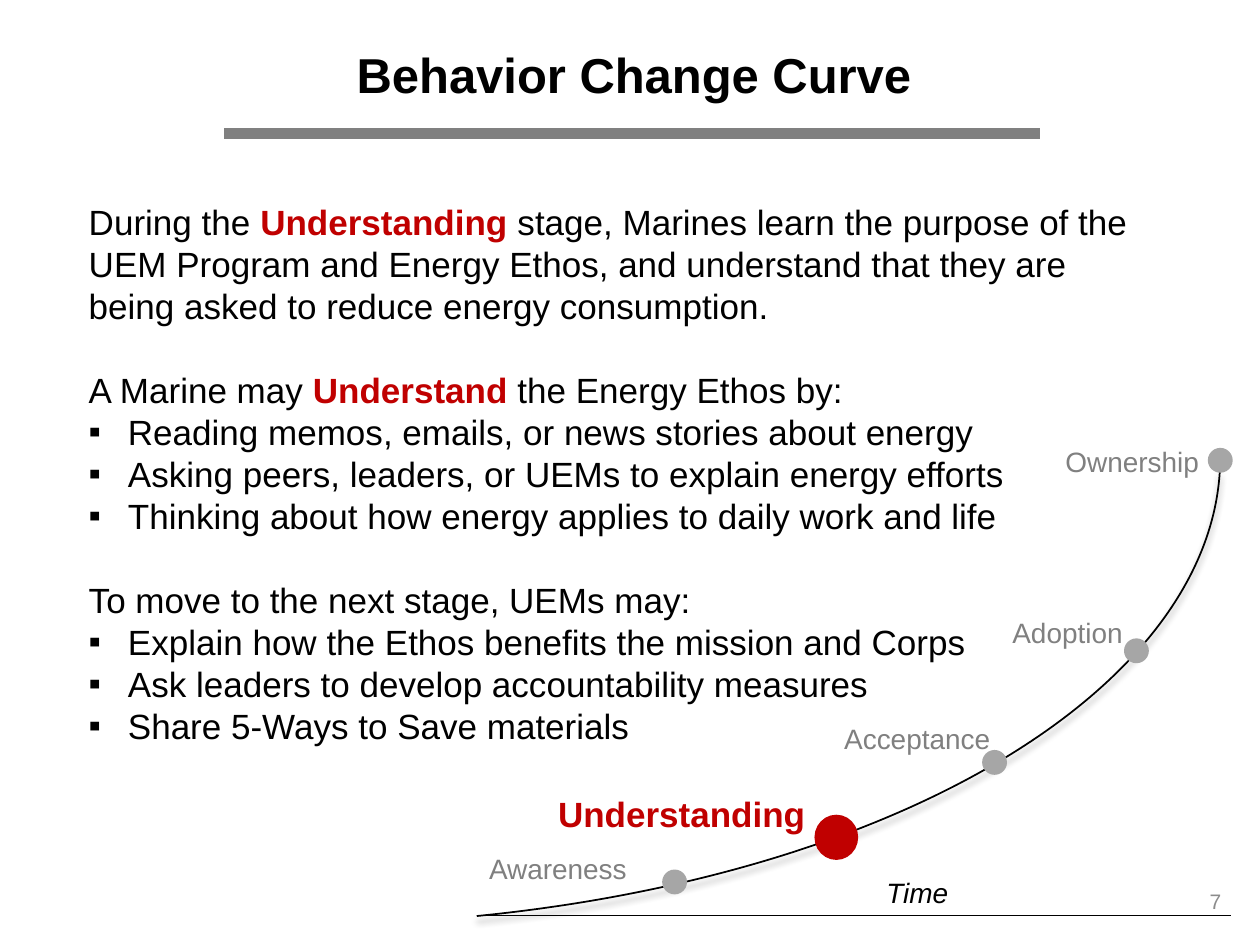
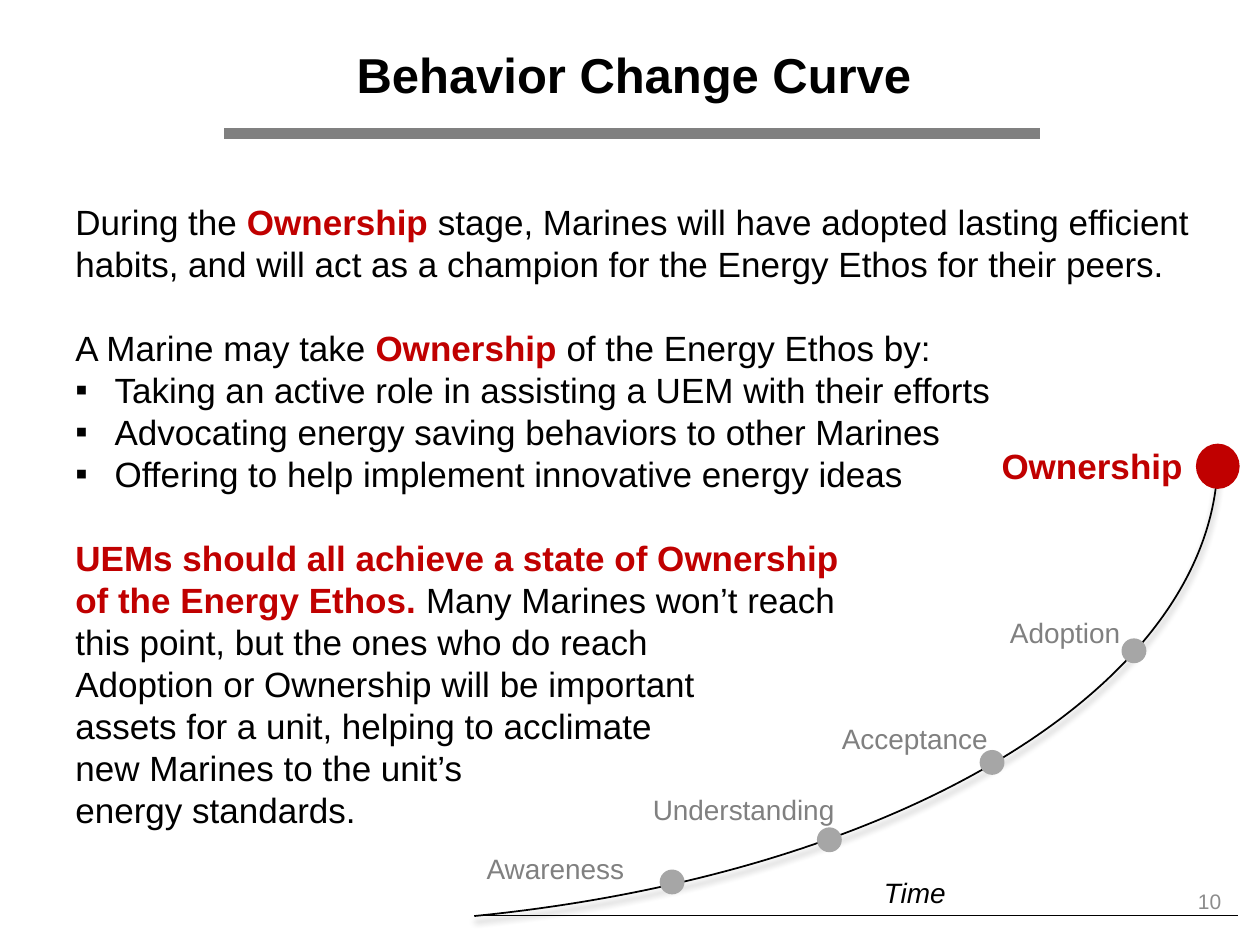
from dataclasses import dataclass

from lxml.etree import SubElement
from pptx import Presentation
from pptx.dml.color import RGBColor
from pptx.enum.shapes import MSO_CONNECTOR, MSO_SHAPE
from pptx.enum.text import MSO_ANCHOR, PP_ALIGN
from pptx.oxml.ns import qn
from pptx.util import Cm, Pt


@dataclass(frozen=True)
class Theme:
    font: str = "Arial"
    ink: str = "000000"
    accent: str = "C00000"
    rule: str = "808080"
    muted: str = "808080"
    dot: str = "A6A6A6"
    number: str = "8C8C8C"
    title_size: int = 28
    body_size: int = 20
    label_size: int = 16
    number_size: int = 12
    body_leading: int = 24


theme = Theme()
BULLET = "▪"


def write(slide, blocks, left, top, width, height, size=theme.body_size, color=theme.ink,
          bold=False, italic=False, align=PP_ALIGN.LEFT, anchor=MSO_ANCHOR.TOP, leading=None):
    """Write blocks of lines; *starred* words are accented, a leading ▪ makes a bullet."""
    box = slide.shapes.add_textbox(Cm(left), Cm(top), Cm(width), Cm(height))
    frame = box.text_frame
    frame.word_wrap = True
    frame.vertical_anchor = anchor
    lines = [(line, row == 0) for block in blocks for row, line in enumerate(block)]
    for index, (line, opens_block) in enumerate(lines):
        paragraph = frame.paragraphs[0] if index == 0 else frame.add_paragraph()
        paragraph.alignment = align
        if leading:
            paragraph.line_spacing = Pt(leading)
            if opens_block and index:
                paragraph.space_before = Pt(leading)
        if line.startswith(BULLET):
            line = line[len(BULLET):]
            properties = paragraph._p.get_or_add_pPr()
            properties.set("marL", str(Cm(0.79)))
            properties.set("indent", str(-Cm(0.79)))
            SubElement(properties, qn("a:buFont"), typeface=theme.font)
            SubElement(properties, qn("a:buChar"), char=BULLET)
        for part, words in enumerate(line.split("*")):
            if not words:
                continue
            accented = part % 2 == 1
            run = paragraph.add_run()
            run.text = words
            run.font.name = theme.font
            run.font.size = Pt(size)
            run.font.bold = bold or accented
            run.font.italic = italic
            run.font.color.rgb = RGBColor.from_string(theme.accent if accented else color)


def draw_line(slide, start, end, y, color, weight):
    line = slide.shapes.add_connector(MSO_CONNECTOR.STRAIGHT, Cm(start), Cm(y), Cm(end), Cm(y))
    line.line.color.rgb = RGBColor.from_string(color)
    line.line.width = Pt(weight)
    SubElement(line._element.spPr, qn("a:effectLst"))


# Stages on the curve: dot centre and label corner, plain and when highlighted
stages = {
    "Awareness": {"plain": (13.6, 17.78, 9.61, 17.04)},
    "Understanding": {"plain": (16.77, 16.93, 12.96, 15.85),
                      "current": (16.86, 16.88, 11.0, 15.86)},
    "Acceptance": {"plain": (20.05, 15.37, 16.77, 14.43)},
    "Adoption": {"plain": (22.91, 13.12, 20.16, 12.28)},
    "Ownership": {"plain": (24.6, 9.28, 21.23, 8.84),
                  "current": (24.6, 9.4, 19.99, 8.84)},
}

# What differs between the slides
lessons = [
    {
        "stage": "Understanding", "number": "7", "curve_shift": 0, "time_end": 24.82,
        "body_left": 1.54, "body_width": 22.02,
        "body": [
            ["During the *Understanding *stage, Marines learn the purpose of the UEM Program "
             "and Energy Ethos, and understand that they are being asked to reduce energy "
             "consumption."],
            ["A Marine may *Understand *the Energy Ethos by:",
             "▪Reading memos, emails, or news stories about energy",
             "▪Asking peers, leaders, or UEMs to explain energy efforts",
             "▪Thinking about how energy applies to daily work and life"],
            ["To move to the next stage, UEMs may:",
             "▪Explain how the Ethos benefits the mission and Corps",
             "▪Ask leaders to develop accountability measures",
             "▪Share 5-Ways to Save materials"],
        ],
    },
    {
        "stage": "Ownership", "number": "10", "curve_shift": -0.05, "time_end": 24.95,
        "body_left": 1.27, "body_width": 23.3,
        "body": [
            ["During the *Ownership *stage, Marines will have adopted lasting efficient habits, "
             "and will act as a champion for the Energy Ethos for their peers."],
            ["A Marine may take *Ownership *of the Energy Ethos by:",
             "▪Taking an active role in assisting a UEM with their efforts",
             "▪Advocating energy saving behaviors to other Marines",
             "▪Offering to help implement innovative energy ideas"],
            ["*UEMs should all achieve a state of Ownership*",
             "*of the Energy Ethos. *Many Marines won’t reach",
             "this point, but the ones who do reach",
             "Adoption or Ownership will be important",
             "assets for a unit, helping to acclimate",
             "new Marines to the unit’s",
             "energy standards."],
        ],
    },
]

deck = Presentation()
deck.slide_width, deck.slide_height = Cm(25.4), Cm(19.05)

for lesson in lessons:
    slide = deck.slides.add_slide(deck.slide_layouts[6])
    shift = lesson["curve_shift"]

    # Title and rule
    draw_line(slide, 4.52, 20.97, 2.69, theme.rule, 6)
    write(slide, [["Behavior Change Curve"]], 3.99, 0.64, 17.58, 1.7, size=theme.title_size,
          bold=True, align=PP_ALIGN.CENTER, anchor=MSO_ANCHOR.MIDDLE)

    # Body
    write(slide, lesson["body"], lesson["body_left"], 3.91, lesson["body_width"], 13.1,
          leading=theme.body_leading)

    # Curve with its soft shadow
    curve = slide.shapes.add_shape(MSO_SHAPE.ARC, Cm(-12.43 + shift), Cm(-0.21),
                                   Cm(37.03), Cm(18.85))
    curve.adjustments[0], curve.adjustments[1] = 0.523, 41.479
    curve.fill.background()
    curve.line.color.rgb = RGBColor.from_string(theme.ink)
    curve.line.width = Pt(1)
    curve.shadow.inherit = False
    effects = curve._element.spPr.find(qn("a:effectLst"))
    shadow = SubElement(effects, qn("a:outerShdw"), blurRad=str(Pt(4)), dist=str(Pt(3)),
                        dir="5400000", rotWithShape="0")
    shadow_color = SubElement(shadow, qn("a:srgbClr"), val=theme.ink)
    SubElement(shadow_color, qn("a:alpha"), val="40000")

    # Stage dots and labels
    for stage, places in stages.items():
        current = stage == lesson["stage"]
        x, y, label_left, label_top = places["current" if current else "plain"]
        dot_width, dot_height = (0.81, 0.84) if current else (0.43, 0.43)
        dot = slide.shapes.add_shape(MSO_SHAPE.OVAL, Cm(x + shift - dot_width / 2),
                                     Cm(y - dot_height / 2), Cm(dot_width), Cm(dot_height))
        dot_color = RGBColor.from_string(theme.accent if current else theme.dot)
        dot.fill.solid()
        dot.fill.fore_color.rgb = dot_color
        dot.line.color.rgb = dot_color
        dot.line.width = Pt(2)
        dot.shadow.inherit = False
        write(slide, [[stage]], label_left + shift, label_top, 6 if current else 4.65, 1,
              size=theme.body_size if current else theme.label_size,
              color=theme.accent if current else theme.muted, bold=current)

    # Time axis
    draw_line(slide, 9.61 + shift, lesson["time_end"], 18.45, theme.ink, 0.75)
    write(slide, [["Time"]], 17.62 + shift, 17.53, 3.61, 0.94, size=theme.label_size, italic=True)

    # Slide number
    write(slide, [[lesson["number"]]], 16.82, 17.65, 8.05, 1.02, size=theme.number_size,
          color=theme.number, align=PP_ALIGN.RIGHT, anchor=MSO_ANCHOR.MIDDLE)

deck.save("out.pptx")
